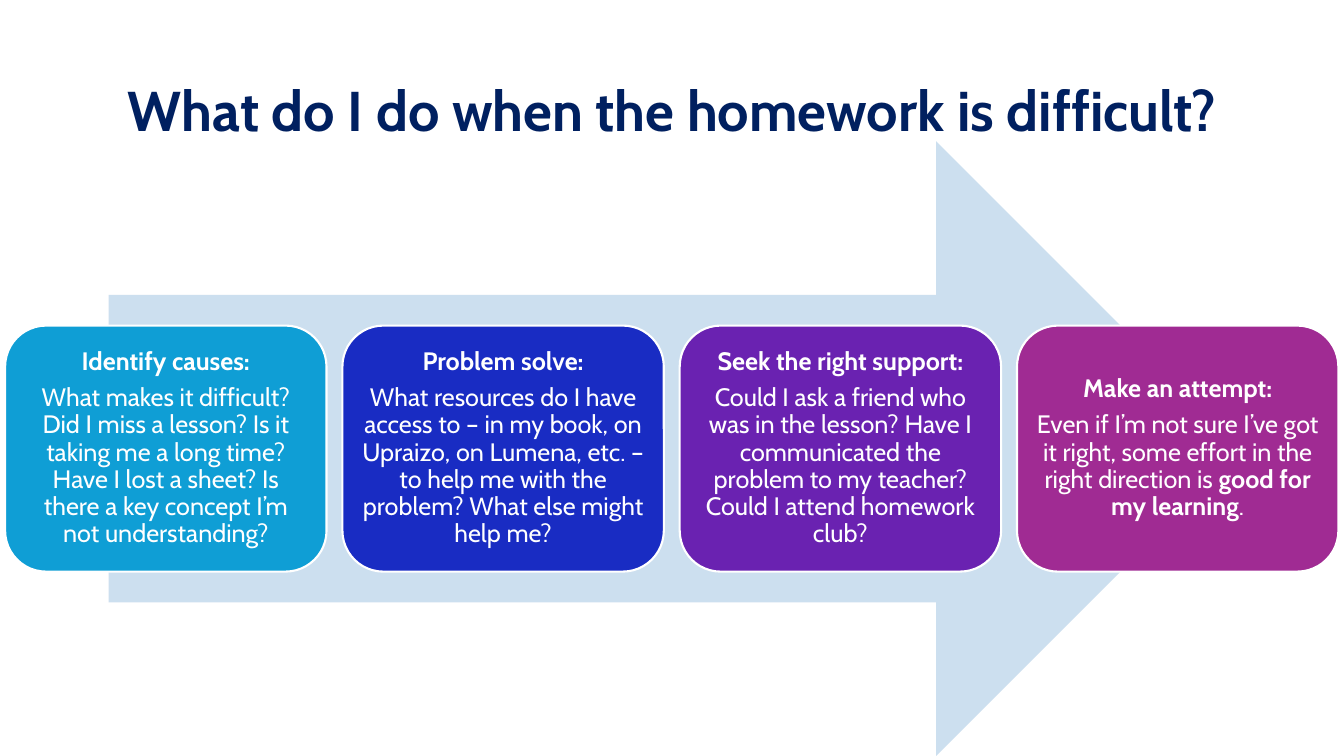
from pptx import Presentation
from pptx import util as u
from pptx.dml.color import RGBColor
from pptx.enum import shapes, text

# Content: each step has a heading, a colour name and (words, bold) spans
TITLE = "What do I do when the homework is difficult?"
STEPS = [
    ("Identify causes:", "blue", [
        ("What makes it difficult? Did I miss a lesson? Is it taking me a long time? "
         "Have I lost a sheet? Is there a key concept I’m not understanding?", False)]),
    ("Problem solve:", "indigo", [
        ("What resources do I have access to – in my book, on Upraizo, on Lumena, etc. – "
         "to help me with the problem? What else might help me?", False)]),
    ("Seek the right support:", "purple", [
        ("Could I ask a friend who was in the lesson? Have I communicated the problem "
         "to my teacher? Could I attend homework club?", False)]),
    ("Make an attempt:", "magenta", [
        ("Even if I’m not sure I’ve got it right, some effort in the right direction is ", False),
        ("good for my learning", True),
        (".", False)]),
]
COLOURS = {"navy": "002060", "pale": "CCDFEF", "white": "FFFFFF", "blue": "0F9ED5",
           "indigo": "192CC3", "purple": "6A22B1", "magenta": "A02B93"}
FONT = "Cabin"

# Layout in centimetres
TITLE_AREA = (2.34, 1.02, 29.21, 3.68)
ARROW_AREA = (2.74, 3.56, 28.6, 15.49)
CARD_LEFT, CARD_WIDTH, CARD_HEIGHT, CARD_PITCH = 0.13, 8.1, 6.2, 8.5
CARD_TOP = ARROW_AREA[1] + (ARROW_AREA[3] - CARD_HEIGHT) / 2
CARD_INSET = 0.18


def colour(name):
    return RGBColor.from_string(COLOURS[name])


def cm(area):
    return [u.Cm(length) for length in area]


def add_filled(page, kind, area, fill):
    shape = page.shapes.add_shape(kind, *cm(area))
    shape.shadow.inherit = False
    shape.fill.solid()
    shape.fill.fore_color.rgb = colour(fill)
    shape.line.fill.background()
    return shape


def write(para, spans, size, ink):
    para.alignment = text.PP_ALIGN.CENTER
    para.line_spacing = 0.9
    for words, bold in spans:
        span = para.add_run()
        span.text = words
        span.font.name = FONT
        span.font.size = u.Pt(size)
        span.font.bold = bold
        span.font.color.rgb = colour(ink)


def add_card(page, area, heading, fill, body):
    card = add_filled(page, shapes.MSO_SHAPE.ROUNDED_RECTANGLE, area, fill)
    card.line.color.rgb = colour("white")
    card.line.width = u.Pt(1.5)
    frame = card.text_frame
    frame.word_wrap = True
    frame.vertical_anchor = text.MSO_ANCHOR.MIDDLE
    frame.margin_left = frame.margin_right = u.Cm(CARD_INSET)
    frame.margin_top = frame.margin_bottom = u.Cm(CARD_INSET)
    write(frame.paragraphs[0], [(heading, True)], 18, "white")
    write(frame.add_paragraph(), body, 18, "white")
    for para in frame.paragraphs:
        para.space_after = u.Pt(6.3)


def main():
    deck = Presentation()
    deck.slide_width, deck.slide_height = u.Cm(33.87), u.Cm(19.05)
    page = deck.slides.add_slide(deck.slide_layouts[6])

    # Title
    box = page.shapes.add_textbox(*cm(TITLE_AREA))
    box.text_frame.word_wrap = True
    box.text_frame.vertical_anchor = text.MSO_ANCHOR.MIDDLE
    write(box.text_frame.paragraphs[0], [(TITLE, True)], 40, "navy")

    # Arrow behind the steps
    add_filled(page, shapes.MSO_SHAPE.RIGHT_ARROW, ARROW_AREA, "pale")

    # Step cards
    for index, (heading, fill, body) in enumerate(STEPS):
        left = CARD_LEFT + index * CARD_PITCH
        add_card(page, (left, CARD_TOP, CARD_WIDTH, CARD_HEIGHT), heading, fill, body)

    deck.save("out.pptx")


if __name__ == "__main__":
    main()
